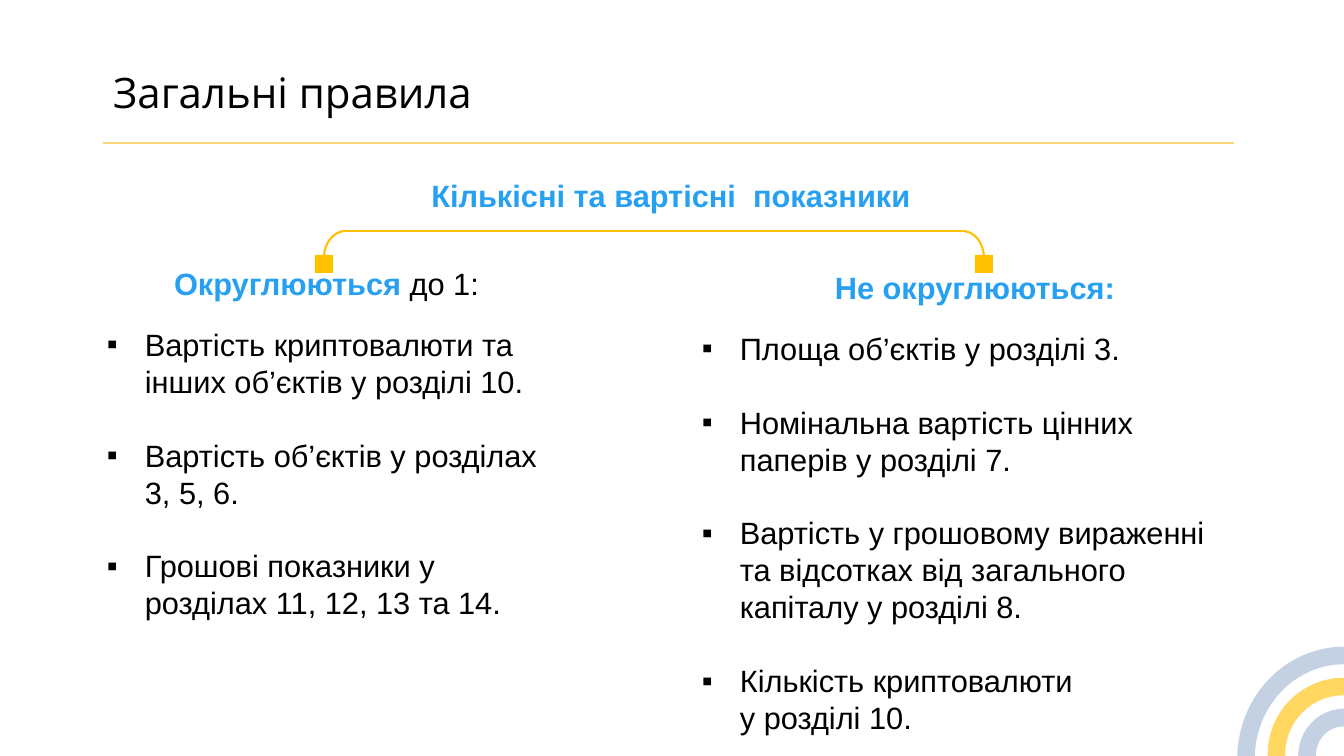
from lxml import etree
from pptx import Presentation
from pptx.dml.color import RGBColor
from pptx.enum.shapes import MSO_CONNECTOR, MSO_SHAPE
from pptx.enum.text import MSO_ANCHOR, MSO_AUTO_SIZE, PP_ALIGN
from pptx.oxml.ns import qn
from pptx.util import Pt

STRAIGHT = MSO_CONNECTOR.STRAIGHT
ARC, OVAL, RECT = MSO_SHAPE.ARC, MSO_SHAPE.OVAL, MSO_SHAPE.RECTANGLE
TOP, NO_FIT = MSO_ANCHOR.TOP, MSO_AUTO_SIZE.NONE
LEFT, CENTER = PP_ALIGN.LEFT, PP_ALIGN.CENTER
EMU_PER_PX = 914400 / 100.8


class Theme:
    black, blue = "000000", "27A0F2"
    gold, amber, steel = "FFC000", "FBBB1C", "9FB5D2"
    title_font, body_font = "Open Sans", "Arial"
    title_size, body_size = 30, 22
    line_height, heading_gap = 26.4, 16.8


def px(n):
    return round(n * EMU_PER_PX)


def add_text(p, text, size=Theme.body_size, font=Theme.body_font,
             color=Theme.black, bold=False):
    """Add text to a paragraph; a newline becomes a line break."""
    for i, part in enumerate(text.split("\n")):
        if i:
            p.add_line_break()
        r = p.add_run()
        r.text = part
        r.font.size, r.font.name, r.font.bold = Pt(size), font, bold
        r.font.color.rgb = RGBColor.from_string(color)


class SlideBuilder:
    def __init__(self, prs, theme):
        self.theme = theme
        self.s = prs.slides.add_slide(prs.slide_layouts[5])

    def set_line(self, line, color, width, alpha=100):
        line.width = Pt(width)
        line.color.rgb = RGBColor.from_string(color)
        if alpha < 100:
            clr = line._get_or_add_ln().find(".//" + qn("a:srgbClr"))
            etree.SubElement(clr, qn("a:alpha"), val=str(alpha * 1000))

    def title(self, text, x, y, w, h):
        sp = self.s.shapes.title
        sp.left, sp.top, sp.width, sp.height = map(px, (x, y, w, h))
        tf = sp.text_frame
        tf.vertical_anchor, tf.auto_size, tf.word_wrap = TOP, NO_FIT, True
        p = tf.paragraphs[0]
        p.alignment = LEFT
        add_text(p, text, self.theme.title_size, self.theme.title_font)

    def text_box(self, x, y, w, h):
        tf = self.s.shapes.add_textbox(*map(px, (x, y, w, h))).text_frame
        tf.word_wrap = True
        return tf

    def heading(self, tf, text, rest=""):
        p = tf.paragraphs[0]
        p.alignment = CENTER
        p.line_spacing = Pt(self.theme.line_height)
        p.space_after = Pt(self.theme.heading_gap)
        add_text(p, text, color=self.theme.blue, bold=True)
        if rest:
            add_text(p, rest)

    def bullet(self, tf, text, gap):
        p = tf.add_paragraph()
        p.line_spacing = Pt(self.theme.line_height)
        p.space_before = Pt(gap)
        pPr = p._p.get_or_add_pPr()
        pPr.set("marL", str(px(38)))
        pPr.set("indent", str(-px(38)))
        etree.SubElement(pPr, qn("a:buFont"), typeface=self.theme.body_font)
        etree.SubElement(pPr, qn("a:buChar"), char="▪")
        add_text(p, text)

    def column(self, x, y, w, h, heading, rest, items):
        tf = self.text_box(x, y, w, h)
        self.heading(tf, heading, rest)
        for i, item in enumerate(items):
            self.bullet(tf, item, self.theme.line_height if i else 0)

    def shape(self, kind, x, y, w, h, fill=None):
        sp = self.s.shapes.add_shape(kind, *map(px, (x, y, w, h)))
        sp.shadow.inherit = False
        if fill:
            sp.fill.solid()
            sp.fill.fore_color.rgb = RGBColor.from_string(fill)
            sp.line.fill.background()
        else:
            sp.fill.background()
        return sp

    def ring(self, cx, cy, w, h, color):
        sp = self.shape(OVAL, cx - w / 2, cy - h / 2, w, h)
        self.set_line(sp.line, color, 12.5, 62)

    def arc(self, x, y, w, h, flip=False):
        sp = self.shape(ARC, x, y, w, h)
        self.set_line(sp.line, self.theme.gold, 1.5)
        if flip:
            sp._element.spPr.find(qn("a:xfrm")).set("flipH", "1")

    def rule(self, x1, x2, y, color, width, alpha=100):
        """Draw a horizontal line."""
        c = self.s.shapes.add_connector(STRAIGHT, *map(px, (x1, y, x2, y)))
        self.set_line(c.line, color, width, alpha)
        etree.SubElement(c._element.spPr, qn("a:effectLst"))

    def bracket(self, left, right, y):
        """Join two square markers with a round-cornered line."""
        w, h, marker = 43, 54, 18
        self.rule(left + w / 2, right - w / 2, y, self.theme.gold, 1.5)
        self.arc(left, y, w, h, flip=True)
        self.arc(right - w, y, w, h)
        for x in (left, right):
            self.shape(RECT, x - marker / 2, y + 24, marker, marker,
                       self.theme.gold)


def main():
    prs = Presentation()
    prs.slide_width, prs.slide_height = px(1344), px(756)
    t = Theme()
    b = SlideBuilder(prs, t)
    for cy, w, h, color in ((759, 196, 207, t.steel),
                            (754, 135, 135, t.gold),
                            (756, 74, 77, t.steel)):
        b.ring(1344, cy, w, h, color)
    b.title("Загальні правила", 103, 61, 1058, 61)
    b.rule(103, 1234, 143, t.amber, 1, 90)
    b.heading(b.text_box(395, 172, 552, 47), "Кількісні та вартісні  показники")
    b.column(97, 260, 459, 370, "Округлюються", " до 1:", (
        "Вартість криптовалюти та інших об’єктів у розділі 10.",
        "Вартість об’єктів у розділах 3, 5, 6.",
        "Грошові показники у розділах 11, 12, 13 та 14."))
    b.column(692, 264, 566, 482, "Не округлюються:", "", (
        "Площа об’єктів у розділі 3.",
        "Номінальна вартість цінних паперів у розділі 7.",
        "Вартість у грошовому вираженні \n"
        "та відсотках від загального капіталу у розділі 8.",
        "Кількість криптовалюти \nу розділі 10."))
    b.bracket(324, 984, 231)
    prs.save("out.pptx")


if __name__ == "__main__":
    main()
